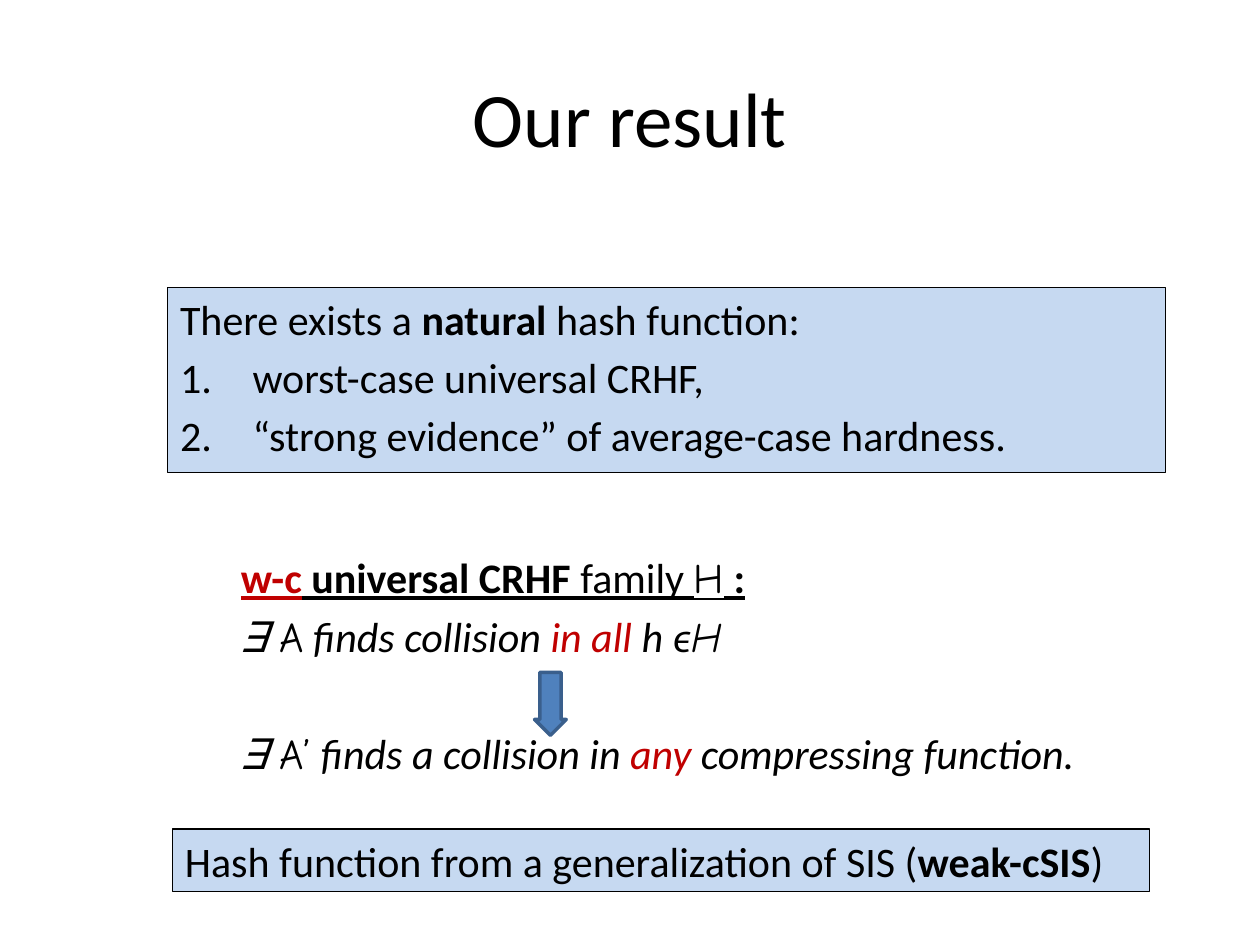
"""Build the "Our result" slide about a worst-case universal hash function."""
from lxml.etree import SubElement
from pptx import Presentation
from pptx.dml.color import RGBColor
from pptx.enum.shapes import MSO_SHAPE
from pptx.enum.text import MSO_ANCHOR, MSO_AUTO_SIZE, PP_ALIGN
from pptx.oxml.ns import qn
from pptx.util import Cm, Pt

BLACK = RGBColor(0x00, 0x00, 0x00)
RED = RGBColor(0xC0, 0x00, 0x00)
PALE_BLUE = RGBColor(0xC6, 0xD9, 0xF1)
BLUE = RGBColor(0x4F, 0x81, 0xBD)
DARK_BLUE = RGBColor(0x3A, 0x5F, 0x8C)
SCRIPT_FONT = "Comic Neue"


def add_span(para, text, size=24, font="Calibri", color=BLACK, bold=False, italic=False, underline=False):
    span = para.add_run()
    span.text = text
    span.font.size = Pt(size)
    span.font.name = font
    span.font.color.rgb = color
    span.font.bold = bold
    span.font.italic = italic
    span.font.underline = underline


def add_line(frame, spans, bullet="buNone", indent=0, before=4.5):
    para = frame.paragraphs[0]
    if para.runs:
        para = frame.add_paragraph()
    para.alignment = PP_ALIGN.LEFT
    para.space_before = Pt(before)
    properties = para._p.get_or_add_pPr()
    properties.set("marL", str(Cm(indent)))
    properties.set("indent", str(-Cm(indent)))
    mark = SubElement(properties, qn(f"a:{bullet}"))
    if bullet == "buAutoNum":
        mark.set("type", "arabicPeriod")
    for text, style in spans:
        add_span(para, text, **style)


deck = Presentation()
deck.slide_width, deck.slide_height = Cm(25.4), Cm(19.05)
page = deck.slides.add_slide(deck.slide_layouts[1])

title = page.shapes.title
title.left, title.top, title.width, title.height = Cm(1.27), Cm(0.76), Cm(22.86), Cm(3.18)
title.text_frame.vertical_anchor = MSO_ANCHOR.MIDDLE
title.text_frame.paragraphs[0].alignment = PP_ALIGN.CENTER
add_span(title.text_frame.paragraphs[0], "Our result", size=44)

numbered = {"bullet": "buAutoNum", "indent": 1.27}
claim_lines = [
    ([("There exists a ", {}), ("natural", {"bold": True}), (" hash function:", {})], {}),
    ([(" worst-case universal CRHF,", {})], numbered),
    ([(" “strong evidence” of average-case hardness.", {})], numbered),
]
source_lines = [
    ([("Hash function from a generalization of SIS (", {}), ("weak-cSIS", {"bold": True}), (")", {})], {}),
]
panels = [
    (3.38, 5.79, 20.12, 3.73, claim_lines),
    (3.48, 16.71, 19.69, 1.27, source_lines),
]
for left, top, width, height, lines in panels:
    panel = page.shapes.add_shape(MSO_SHAPE.RECTANGLE, Cm(left), Cm(top), Cm(width), Cm(height))
    panel.shadow.inherit = False
    panel.fill.solid()
    panel.fill.fore_color.rgb = PALE_BLUE
    panel.line.color.rgb = BLACK
    panel.line.width = Pt(0.75)
    panel.text_frame.word_wrap = True
    panel.text_frame.vertical_anchor = MSO_ANCHOR.TOP
    for spans, layout in lines:
        add_line(panel.text_frame, spans, **layout)

body = page.placeholders[1]
body.left, body.top, body.width, body.height = Cm(4.6), Cm(11), Cm(18.49), Cm(5.08)
body.text_frame.auto_size = MSO_AUTO_SIZE.NONE
heading = {"underline": True}
strong = {"underline": True, "bold": True}
slanted = {"italic": True}
stressed = {"italic": True, "color": RED}
algorithm = {"font": SCRIPT_FONT}
add_line(body.text_frame, [
    ("w-c", {**strong, "color": RED}),
    (" universal CRHF ", strong),
    ("family ", heading),
    ("H", {**heading, "font": SCRIPT_FONT}),
    (" ", heading),
    (":", strong),
])
add_line(body.text_frame, [
    ("ꓱ ", slanted),
    ("A", algorithm),
    (" finds collision ", slanted),
    ("in all ", stressed),
    ("h ϵ", slanted),
    ("H", {**slanted, "font": SCRIPT_FONT}),
])
add_line(body.text_frame, [
    ("ꓱ ", slanted),
    ("A’", algorithm),
    (" finds a collision in ", slanted),
    ("any", stressed),
    (" compressing function.", slanted),
], before=38)

arrow = page.shapes.add_shape(MSO_SHAPE.RIGHT_ARROW, Cm(10.46), Cm(13.87), Cm(1.27), Cm(0.64))
arrow.rotation = 90
arrow.adjustments[0] = 0.67
arrow.adjustments[1] = 0.5
arrow.shadow.inherit = False
arrow.fill.solid()
arrow.fill.fore_color.rgb = BLUE
arrow.line.color.rgb = DARK_BLUE
arrow.line.width = Pt(2)

deck.save("out.pptx")
